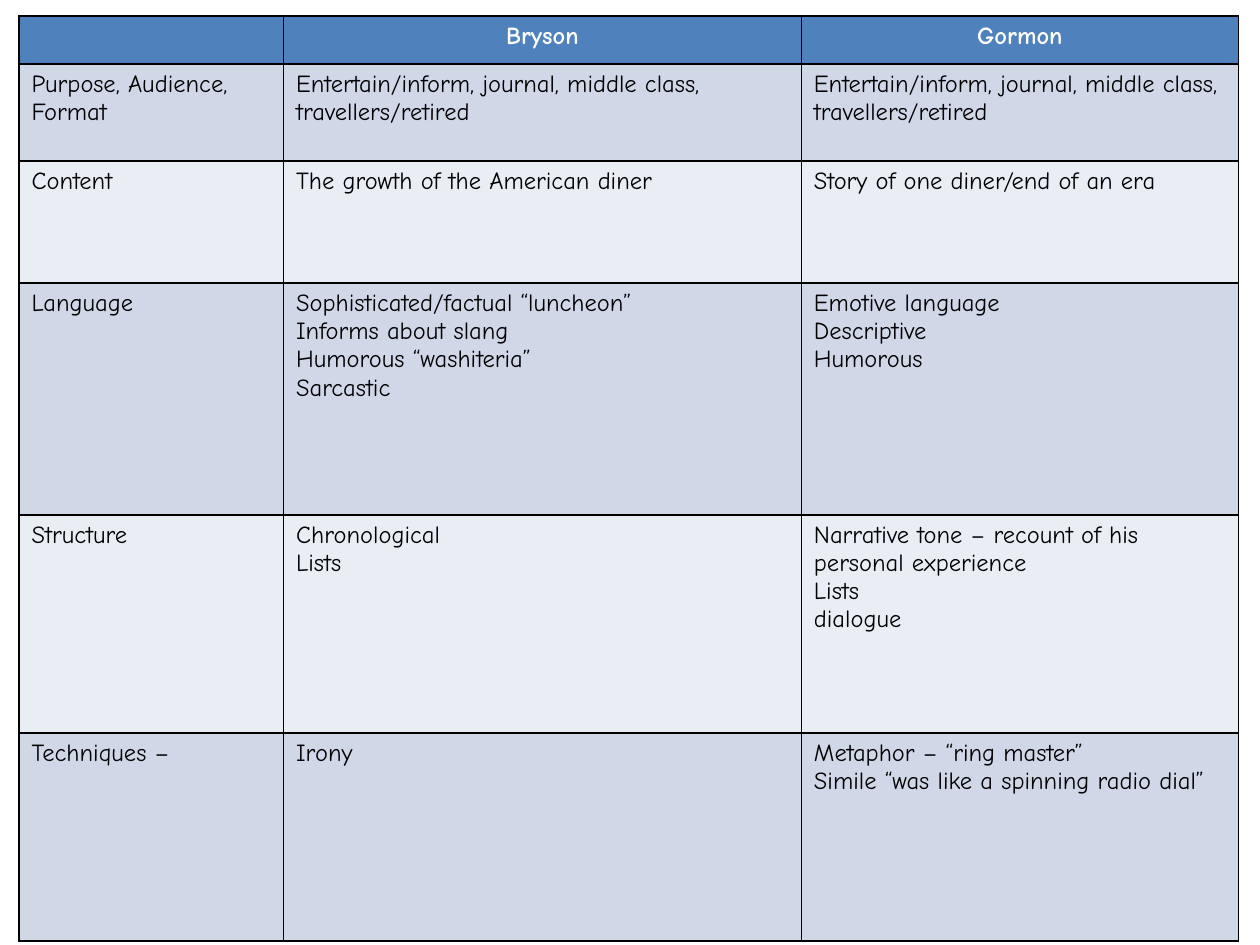
from pptx import Presentation
from pptx import util as u
from pptx.dml.color import RGBColor
from pptx.enum import text
from pptx.oxml import parse_xml
from pptx.oxml.ns import nsdecls

WIDE, HIGH = 10, 7.5
COLS = [2.1, 4.11, 3.47]
ROWS = [0.36, 0.77, 0.97, 1.84, 1.73, 1.65]
READERS = "Entertain/inform, journal, middle class, travellers/retired"
CELLS = [
    ["", "Bryson", "Gormon"],
    ["Purpose, Audience, Format", READERS, READERS],
    ["Content", "The growth of the American diner", "Story of one diner/end of an era"],
    ["Language",
     "Sophisticated/factual “luncheon”\nInforms about slang\nHumorous “washiteria”\nSarcastic",
     "Emotive language\nDescriptive\nHumorous"],
    ["Structure", "Chronological\nLists",
     "Narrative tone – recount of his personal experience\nLists\ndialogue"],
    ["Techniques –", "Irony",
     "Metaphor – “ring master”\nSimile “was like a spinning radio dial”"],
]


def tint(code):
    """Turn a hex string into a colour."""
    return RGBColor.from_string(code)


def write(frame, words, font="Comic Neue", size=14, color="000000", bold=False, align="LEFT"):
    """Fill a text frame with one paragraph per line."""
    for i, line in enumerate(words.split("\n")):
        para = frame.add_paragraph() if i else frame.paragraphs[0]
        para.alignment = getattr(text.PP_ALIGN, align)
        run = para.add_run()
        run.text = line
        run.font.name, run.font.size, run.font.bold = font, u.Pt(size), bold
        run.font.color.rgb = tint(color)


class Deck:
    """Hold the table style and the current slide."""

    head, bands, edge = "4F81BD", ("E9EDF4", "D0D8E8"), "000000"

    def __init__(self):
        """Start a deck with one blank slide."""
        self.show = Presentation()
        self.show.slide_width, self.show.slide_height = u.Inches(WIDE), u.Inches(HIGH)
        self.slide = self.show.slides.add_slide(self.show.slide_layouts[6])

    def border(self, cell, width=1):
        """Draw a line on all four sides of a cell."""
        props = cell._tc.get_or_add_tcPr()
        for side in "LRTB":
            props.append(parse_xml(
                f'<a:ln{side} {nsdecls("a")} w="{u.Pt(width)}"><a:solidFill>'
                f'<a:srgbClr val="{self.edge}"/></a:solidFill></a:ln{side}>'))

    def table(self, left, top, cols, rows, cells):
        """Add a banded table, placed by shares of the slide."""
        grid = self.slide.shapes.add_table(
            len(rows), len(cols), u.Inches(left * WIDE), u.Inches(top * HIGH),
            u.Inches(sum(cols)), u.Inches(sum(rows))).table
        for col, width in zip(grid.columns, cols):
            col.width = u.Inches(width)
        for r, (row, height) in enumerate(zip(grid.rows, rows)):
            row.height = u.Inches(height)
            look = {} if r else dict(color="FFFFFF", bold=True, align="CENTER")
            for cell, words in zip(row.cells, cells[r]):
                self.border(cell)
                cell.fill.solid()
                cell.fill.fore_color.rgb = tint(self.bands[r % 2] if r else self.head)
                write(cell.text_frame, words, **look)


def main():
    """Build and save the comparison table."""
    deck = Deck()
    deck.table(0.015, 0.017, COLS, ROWS, CELLS)
    deck.show.save("out.pptx")


if __name__ == "__main__":
    main()
